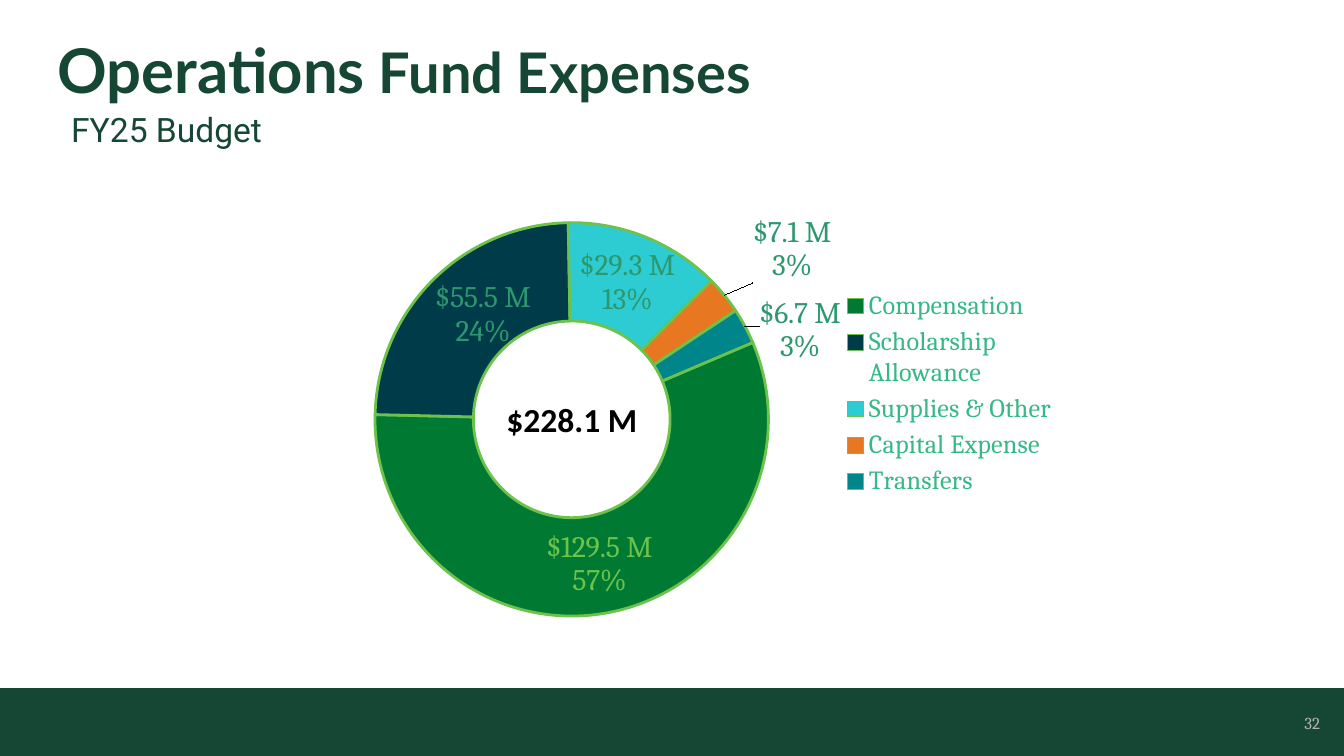
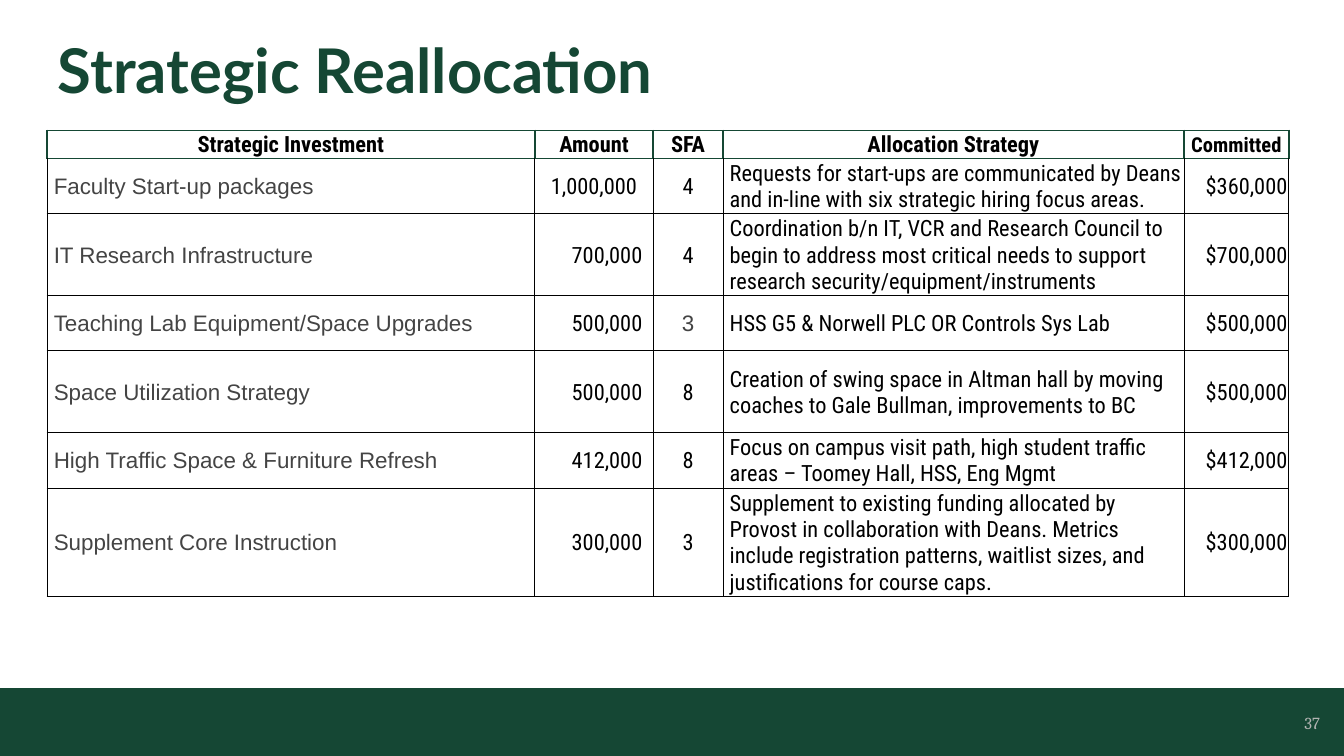
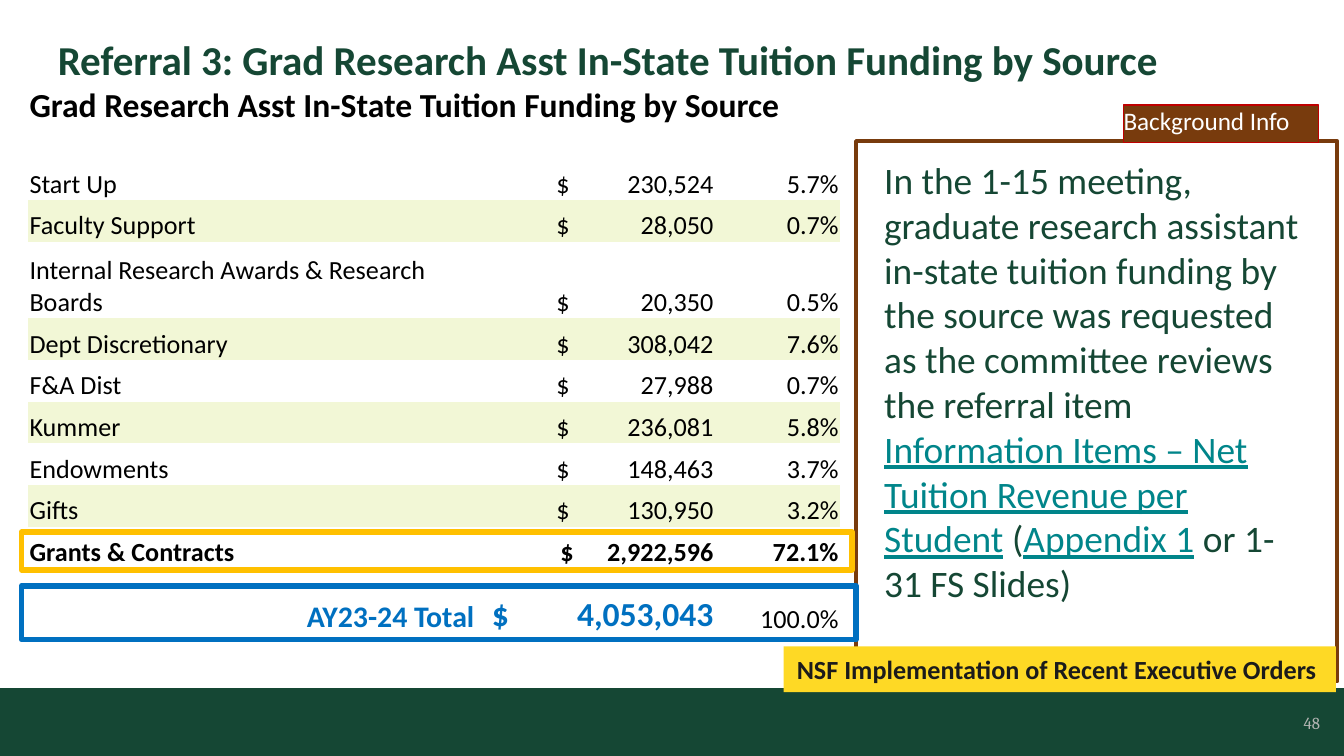
from dataclasses import dataclass, replace
from typing import NamedTuple, Optional, Sequence

from lxml import etree
from pptx import Presentation
from pptx import util as u
from pptx.chart import data as chart_data
from pptx.dml.color import RGBColor
from pptx.enum import chart as charts, shapes, text
from pptx.oxml import ns, xmlchemy

GREEN = RGBColor(0x15, 0x47, 0x34)
TEAL = RGBColor(0x00, 0x85, 0x8A)
BLACK = RGBColor(0, 0, 0)
WHITE = RGBColor(0xFF, 0xFF, 0xFF)
INK = RGBColor(0x1B, 0x1B, 0x1B)
GRAY = RGBColor(0x44, 0x44, 0x44)
SILVER = RGBColor(0xB2, 0xB4, 0xB2)
BROWN = RGBColor(0x78, 0x3B, 0x0D)
RED = RGBColor(0xC0, 0, 0)
BLUE = RGBColor(0x00, 0x70, 0xC0)
AMBER = RGBColor(0xFF, 0xC0, 0)
YELLOW = RGBColor(0xFE, 0xD9, 0x25)
PALE = RGBColor(0xF2, 0xF7, 0xD6)
LIME = RGBColor(0x6C, 0xC2, 0x4A)
LEGEND_GREEN = RGBColor(0x36, 0xB8, 0x87)
LABEL_GREEN = RGBColor(0x2D, 0x98, 0x6F)

WIDTH = u.Inches(10)
HEIGHT = WIDTH * 9 // 16
UNIT = WIDTH // 100
NO_STYLE = "{2D5ABB26-0587-4C30-8999-92F81FD0307C}"
MONEY = '"$"#.0,,\\ "M"'

LEFT, CENTER, RIGHT = text.PP_ALIGN.LEFT, text.PP_ALIGN.CENTER, text.PP_ALIGN.RIGHT
TOP, MIDDLE, BOTTOM = text.MSO_ANCHOR.TOP, text.MSO_ANCHOR.MIDDLE, text.MSO_ANCHOR.BOTTOM


class Area(NamedTuple):
    """A place on the slide, in grid units of a hundredth of its width."""
    left: float
    top: float
    width: float
    height: float

    def emu(self) -> list:
        """Return the place in slide lengths."""
        return [int(length * UNIT) for length in self]


@dataclass(frozen=True)
class Style:
    """The look of a run."""
    font: str
    size: float
    color: RGBColor
    bold: bool = False
    underline: bool = False


class Span(NamedTuple):
    """Words in one style."""
    words: str
    style: Style


@dataclass(frozen=True)
class Box:
    """A rectangle with optional fill, line and text."""
    area: Area
    fill: Optional[RGBColor] = None
    line: Optional[RGBColor] = None
    weight: float = 0
    spans: Sequence[Span] = ()
    insets: tuple = (1, 0.5, 1, 0.5)
    align: int = LEFT
    anchor: int = TOP
    grow: bool = False


class Expense(NamedTuple):
    """A slice of the budget, its label colour and label shift."""
    name: str
    amount: int
    color: RGBColor
    label: RGBColor = LABEL_GREEN
    shift: Optional[tuple] = None


class Investment(NamedTuple):
    """A row of the reallocation table."""
    name: str
    amount: str
    sfa: str
    strategy: str
    committed: str
    height: float


class Source(NamedTuple):
    """A row of the tuition funding table."""
    name: str
    amount: str
    share: str
    height: float = 3.1


TITLE = Style("Lato", 33, GREEN, bold=True)
CALIBRI = Style("Calibri", 14, BLACK)
CONDENSED = Style("Roboto Condensed", 12, BLACK)
ARIAL = Style("Arial", 12, GRAY)
NUMBER = Style("Cambria", 9, SILVER)

EXPENSES = [
    Expense("Compensation", 129_500_000, RGBColor(0x00, 0x7A, 0x33), LIME),
    Expense("Scholarship Allowance", 55_500_000, RGBColor(0x00, 0x3B, 0x49), shift=(0.02, 0)),
    Expense("Supplies & Other", 29_300_000, RGBColor(0x2D, 0xCC, 0xD3)),
    Expense("Capital Expense", 7_100_000, RGBColor(0xE8, 0x77, 0x22), shift=(0.14, -0.12)),
    Expense("Transfers", 6_700_000, TEAL, shift=(0.13, -0.03)),
]

HEADINGS = ["Strategic Investment", "Amount", "SFA", "Allocation Strategy", "Committed"]
INVESTMENTS = [
    Investment("Faculty Start-up packages", "1,000,000", "4",
               "Requests for start-ups are communicated by Deans and in-line with "
               "six strategic hiring focus areas.", "$360,000", 4.1),
    Investment("IT Research Infrastructure", "700,000", "4",
               "Coordination b/n IT, VCR and Research Council to begin to address most "
               "critical needs to support research security/equipment/instruments",
               "$700,000", 6.1),
    Investment("Teaching Lab Equipment/Space Upgrades", "500,000", "3",
               "HSS G5 & Norwell PLC OR Controls Sys Lab", "$500,000", 4.1),
    Investment("Space Utilization Strategy", "500,000", "8",
               "Creation of swing space in Altman hall by moving coaches to Gale Bullman, "
               "improvements to BC", "$500,000", 6.1),
    Investment("High Traffic Space & Furniture Refresh", "412,000", "8",
               "Focus on campus visit path, high student traffic areas – Toomey Hall, "
               "HSS, Eng Mgmt", "$412,000", 2.7),
    Investment("Supplement Core Instruction", "300,000", "3",
               "Supplement to existing funding allocated by Provost in collaboration with "
               "Deans. Metrics include registration patterns, waitlist sizes, and "
               "justifications for course caps.", "$300,000", 6.1),
]

SOURCES = [
    Source("Start Up", "230,524", "5.7%"),
    Source("Faculty Support", "28,050", "0.7%"),
    Source("Internal Research Awards & Research Boards", "20,350", "0.5%", 5.7),
    Source("Dept Discretionary", "308,042", "7.6%"),
    Source("F&A Dist", "27,988", "0.7%"),
    Source("Kummer", "236,081", "5.8%"),
    Source("Endowments", "148,463", "3.7%"),
    Source("Gifts", "130,950", "3.2%"),
    Source("Grants & Contracts", "2,922,596", "72.1%"),
]


def element(tag: str, **attributes):
    """Make an XML element with the given attributes."""
    made = xmlchemy.OxmlElement(tag)
    for key, value in attributes.items():
        made.set(key, str(value))
    return made


def write(paragraph, spans: Sequence[Span], align: int = LEFT) -> None:
    """Put styled words in a paragraph."""
    paragraph.text = spans[0].words
    for span in spans[1:]:
        paragraph.add_run().text = span.words
    paragraph.alignment = align
    for run, (_, style) in zip(paragraph.runs, spans):
        run.font.name, run.font.size = style.font, u.Pt(style.size)
        run.font.color.rgb = style.color
        run.font.bold, run.font.underline = style.bold, style.underline


def set_insets(holder, insets: tuple) -> None:
    """Set the left, top, right and bottom margins of a frame or cell."""
    for side, inset in zip(("left", "top", "right", "bottom"), insets):
        setattr(holder, f"margin_{side}", int(inset * UNIT))


def add_box(slide, box: Box):
    """Draw a box as a rectangle, or as a text box when it is bare."""
    if box.fill is None and box.line is None:
        shape = slide.shapes.add_textbox(*box.area.emu())
    else:
        shape = slide.shapes.add_shape(shapes.MSO_SHAPE.RECTANGLE, *box.area.emu())
        shape.shadow.inherit = False
        for part, color in ((shape.fill, box.fill), (shape.line.fill, box.line)):
            if color is None:
                part.background()
            else:
                part.solid()
                part.fore_color.rgb = color
        if box.line is not None:
            shape.line.width = u.Pt(box.weight)
    if box.spans:
        frame = shape.text_frame
        frame.word_wrap, frame.vertical_anchor = True, box.anchor
        if box.grow:
            frame.auto_size = text.MSO_AUTO_SIZE.SHAPE_TO_FIT_TEXT
        set_insets(frame, box.insets)
        write(frame.paragraphs[0], box.spans, box.align)
    return shape


def new_slide(deck, number: str, *title: Span):
    """Add a slide with the shared title, footer band and number."""
    slide = deck.slides.add_slide(deck.slide_layouts[5])
    heading = slide.shapes.title
    heading.left, heading.top, heading.width, heading.height = Area(4.3, 3, 91.4, 4.4).emu()
    frame = heading.text_frame
    frame.word_wrap, frame.vertical_anchor = True, TOP
    frame.auto_size = text.MSO_AUTO_SIZE.NONE
    set_insets(frame, (0, 0, 0, 0))
    write(frame.paragraphs[0], title)
    frame.paragraphs[0].line_spacing = 0.9
    add_box(slide, Box(Area(-0.4, 51.2, 100.4, 5.1), fill=GREEN))
    add_box(slide, Box(Area(93.3, 52.3, 5.9, 3), spans=[Span(number, NUMBER)],
                       align=RIGHT, anchor=MIDDLE))
    return slide


def add_grid(slide, left: float, top: float, columns: Sequence[float], rows: Sequence[float]):
    """Add an unstyled table with the given column widths and row heights."""
    area = Area(left, top, sum(columns), sum(rows))
    table = slide.shapes.add_table(len(rows), len(columns), *area.emu()).table
    table.first_row = table.horz_banding = False
    table._tbl.tblPr.find(ns.qn("a:tableStyleId")).text = NO_STYLE
    for tracks, lengths, side in ((table.columns, columns, "width"), (table.rows, rows, "height")):
        for track, length in zip(tracks, lengths):
            setattr(track, side, int(length * UNIT))
    return table


def fill_cell(cell, spans: Sequence[Span], align: int, anchor: int,
              left: float = 0.1, right: float = 0.1, fill: Optional[RGBColor] = None) -> None:
    """Write a cell and set its margins and fill."""
    write(cell.text_frame.paragraphs[0], spans, align)
    cell.vertical_anchor = anchor
    set_insets(cell, (left, 0.1, right, 0))
    if fill is None:
        cell.fill.background()
    else:
        cell.fill.solid()
        cell.fill.fore_color.rgb = fill


def border_cell(cell, color: RGBColor, points: float, top: tuple) -> None:
    """Draw the four borders of a cell, the top one on its own terms."""
    properties = cell._tc.get_or_add_tcPr()
    for place, side in enumerate("LRTB"):
        shade, weight = top if side == "T" else (color, points)
        border = element(f"a:ln{side}", w=u.Pt(weight))
        paint = etree.SubElement(border, ns.qn("a:solidFill"))
        etree.SubElement(paint, ns.qn("a:srgbClr")).set("val", str(shade))
        properties.insert(place, border)


def manual_layout(**places):
    """Make a chart layout element from its settings."""
    layout = element("c:layout")
    manual = etree.SubElement(layout, ns.qn("c:manualLayout"))
    for key, value in places.items():
        etree.SubElement(manual, ns.qn(f"c:{key}")).set("val", str(value))
    return layout


def set_font(font, size: float, color: RGBColor) -> None:
    """Format the chart's lettering."""
    font.name, font.size = "Cambria", u.Pt(size)
    font.color.rgb = color


def break_label(label) -> None:
    """Put the value and the percentage on separate lines."""
    separator = element("c:separator")
    separator.text = "\n"
    label.find(ns.qn("c:showBubbleSize")).addnext(separator)


def label_slice(point, expense: Expense) -> None:
    """Colour and place the label of one slice."""
    set_font(point.data_label.font, 16, expense.label)
    label = point.data_label._get_or_add_dLbl()
    label.find(ns.qn("c:showPercent")).set("val", "1")
    anchor = label.find(ns.qn("c:idx"))
    anchor.addnext(element("c:numFmt", formatCode=MONEY, sourceLinked=1))
    if expense.shift:
        anchor.addnext(manual_layout(x=expense.shift[0], y=expense.shift[1]))
    break_label(label)


def add_expense_chart(slide) -> None:
    """Draw the ring of expenses with its legend."""
    budget = chart_data.CategoryChartData(number_format=MONEY)
    budget.categories = [expense.name for expense in EXPENSES]
    budget.add_series("Series 1", [expense.amount for expense in EXPENSES])
    ring = slide.shapes.add_chart(charts.XL_CHART_TYPE.DOUGHNUT,
                                  *Area(23.4, 5.4, 56.3, 47.8).emu(), budget).chart
    ring.has_title = False
    set_font(ring.font, 10, GREEN)
    ring.has_legend = True
    ring.legend.position = charts.XL_LEGEND_POSITION.RIGHT
    ring.legend.include_in_layout = False
    set_font(ring.legend.font, 14, LEGEND_GREEN)
    ring.legend._element.find(ns.qn("c:legendPos")).addnext(
        manual_layout(xMode="edge", yMode="edge", x=0.69, y=0.33, w=0.29, h=0.34))

    plot_area = ring._chartSpace.chart.plotArea
    for layout in plot_area.findall(ns.qn("c:layout")):
        plot_area.remove(layout)
    plot_area.insert(0, manual_layout(layoutTarget="inner", xMode="edge", yMode="edge",
                                      x=0.08, y=0.1, w=0.52, h=0.88))
    ring.plots[0].vary_by_categories = True
    for tag, value in (("c:firstSliceAng", "67"), ("c:holeSize", "48")):
        ring.plots[0]._element.find(ns.qn(tag)).set("val", value)

    series = ring.plots[0].series[0]
    labels = series.data_labels
    labels.show_value = labels.show_percentage = True
    labels.number_format, labels.number_format_is_linked = MONEY, True
    set_font(labels.font, 16, LABEL_GREEN)
    break_label(labels._element)
    for index, expense in enumerate(EXPENSES):
        point = series.points[index]
        point.format.fill.solid()
        point.format.fill.fore_color.rgb = expense.color
        point.format.line.color.rgb = LIME
        point.format.line.width = u.Pt(1.5)
        label_slice(point, expense)


def expenses_slide(deck) -> None:
    """Build the operations fund slide."""
    slide = new_slide(deck, "32", Span("Operations", TITLE),
                      Span(" Fund Expenses", replace(TITLE, size=30)))
    add_expense_chart(slide)
    add_box(slide, Box(Area(36.7, 29.2, 12, 5),
                       spans=[Span("$228.1 M", Style("Calibri", 18, BLACK, bold=True))]))
    add_box(slide, Box(Area(5.3, 8.1, 91.4, 3.4), insets=(0, 0, 0, 0),
                       spans=[Span("FY25 Budget", Style("Roboto", 18, GREEN))]))


def reallocation_slide(deck) -> None:
    """Build the strategic reallocation slide."""
    slide = new_slide(deck, "37", Span("Strategic Reallocation", TITLE))
    table = add_grid(slide, 3.5, 9.7, [36.3, 8.8, 5.2, 34.3, 7.8],
                     [2.1] + [investment.height for investment in INVESTMENTS])
    for column, heading in enumerate(HEADINGS):
        style = replace(CONDENSED, bold=True, size=11 if heading == "Committed" else 12)
        fill_cell(table.cell(0, column), [Span(heading, style)], CENTER, MIDDLE)
        border_cell(table.cell(0, column), GREEN, 1, (GREEN, 1))
    aligns = [LEFT, RIGHT, CENTER, LEFT, RIGHT]
    for row, investment in enumerate(INVESTMENTS, 1):
        for column, (words, align) in enumerate(zip(investment, aligns)):
            plain = column == 0 or (column == 2 and investment.name.startswith("Teaching"))
            amount_gap = 1.2 if row == 1 else 0.8
            cell = table.cell(row, column)
            fill_cell(cell, [Span(words, ARIAL if plain else CONDENSED)], align, MIDDLE,
                      left=0.5 if align == LEFT else 0.1,
                      right=amount_gap if column == 1 else 0.1)
            border_cell(cell, BLACK, 0.5, (GREEN, 1) if row == 1 else (BLACK, 0.5))


def fill_amount(cell, amount: str, style: Style, indent: float,
                fill: Optional[RGBColor] = None) -> None:
    """Write a sum with its dollar sign apart and its digits on a right tab."""
    properties = cell.text_frame.paragraphs[0]._p.get_or_add_pPr()
    tabs = etree.SubElement(properties, ns.qn("a:tabLst"))
    tabs.append(element("a:tab", pos=int((17.7 - indent) * UNIT), algn="r"))
    fill_cell(cell, [Span(f"$\t{amount}", style)], LEFT, BOTTOM, left=indent, fill=fill)


def add_funding_table(slide) -> None:
    """Draw the table of tuition funding by source."""
    heights = [6.1, 2.4, *(source.height for source in SOURCES), 1.3, 3.7]
    table = add_grid(slide, 2.1, 3.3, [33.3, 18.3, 8.8], heights)
    last = len(heights) - 1
    table.cell(0, 0).merge(table.cell(0, 2))
    fill_cell(table.cell(0, 0), [Span("Grad Research Asst In-State Tuition Funding by Source",
                                      replace(CALIBRI, size=18, bold=True))], LEFT, BOTTOM)
    for row in (1, last - 1):
        for cell in table.rows[row].cells:
            cell.text_frame.paragraphs[0]._p.append(element("a:endParaRPr", sz=400))
            set_insets(cell, (0.1, 0.1, 0.1, 0))
    for row, source in enumerate(SOURCES, 2):
        largest = source is SOURCES[-1]
        style = replace(CALIBRI, bold=largest)
        fill = PALE if row % 2 else None
        name, amount, share = table.rows[row].cells
        fill_cell(name, [Span(source.name, style)], LEFT, BOTTOM, fill=fill)
        fill_amount(amount, source.amount, style, 6.3 if largest else 6, fill)
        fill_cell(share, [Span(source.share, style)], RIGHT, BOTTOM, fill=fill)
    total = replace(CALIBRI, size=16, color=BLUE, bold=True)
    name, amount, share = table.rows[last].cells
    fill_cell(name, [Span("AY23-24 Total", total)], RIGHT, BOTTOM)
    fill_amount(amount, "4,053,043", replace(total, size=18), 1.2)
    fill_cell(share, [Span("100.0%", CALIBRI)], RIGHT, BOTTOM)


def referral_slide(deck) -> None:
    """Build the tuition referral slide."""
    slide = new_slide(deck, "48",
                      Span("Referral 3: Grad Research Asst In-State Tuition Funding by Source",
                           Style("Calibri", 22, GREEN, bold=True)))
    body = Style("Calibri", 20, GREEN)
    link = replace(body, color=TEAL, underline=True)
    background = [
        Span("In the 1-15 meeting, graduate research assistant in-state tuition funding by "
             "the source was requested as the committee reviews the referral item ", body),
        Span("Information Items – Net Tuition Revenue per Student", link),
        Span(" (", body),
        Span("Appendix 1", link),
        Span(" or 1-31 FS Slides)", body),
    ]
    add_box(slide, Box(Area(63.7, 10.5, 35.8, 40.2), line=BROWN, weight=2.25))
    add_box(slide, Box(Area(83.6, 7.8, 14.5, 2.8), BROWN, RED, 0.75,
                       [Span("Background Info", replace(CALIBRI, size=13.5, color=WHITE))],
                       insets=(0, 0, 0, 0.5), grow=True))
    add_box(slide, Box(Area(64.8, 11.2, 33.2, 38), spans=background, grow=True))
    add_funding_table(slide)
    add_box(slide, Box(Area(1.6, 43.6, 62.1, 4), line=BLUE, weight=3))
    add_box(slide, Box(Area(58.3, 48.1, 41.1, 3.4), YELLOW, grow=True,
                       spans=[Span("NSF Implementation of Recent Executive Orders",
                                   replace(CALIBRI, color=INK, bold=True))]))
    add_box(slide, Box(Area(1.6, 39.6, 61.8, 2.8), line=AMBER, weight=3))


def main() -> None:
    """Build and save the deck."""
    deck = Presentation()
    deck.slide_width, deck.slide_height = WIDTH, HEIGHT
    for build in (expenses_slide, reallocation_slide, referral_slide):
        build(deck)
    deck.save("out.pptx")


if __name__ == "__main__":
    main()
